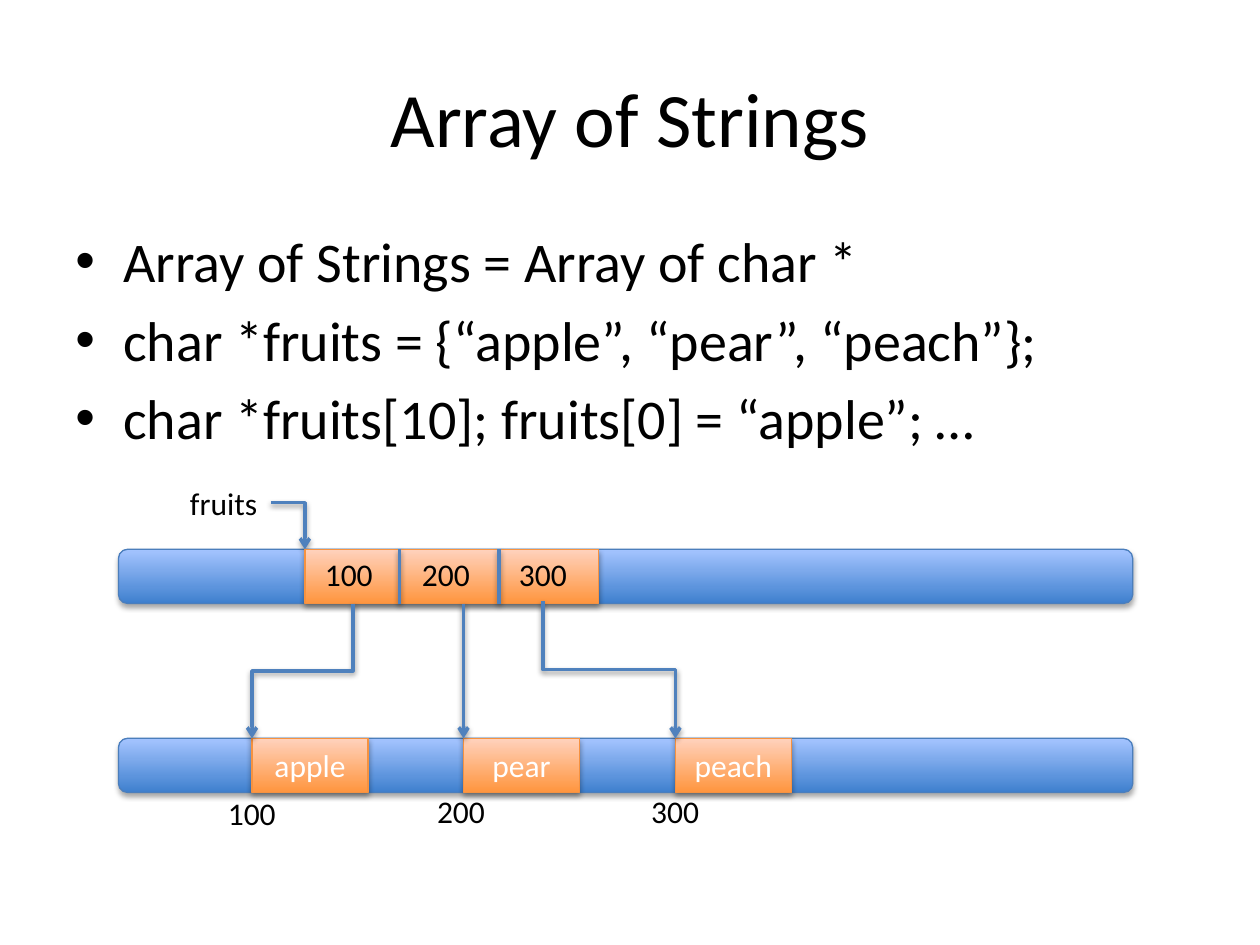
from dataclasses import dataclass

import pptx
import pptx.dml.color
import pptx.enum.dml
import pptx.enum.shapes
import pptx.enum.text
import pptx.oxml.ns
import pptx.util
from lxml import etree

PX = 9144  # one px is a hundredth of an inch
FONT = "Calibri"
HEX = {
    "ink": "000000", "white": "FFFFFF", "wire": "4F81BD",
    "blue low": "3F80CE", "blue top": "A4C4FF", "blue edge": "4B7EBC",
    "gold low": "FF953E", "gold top": "FFD2BD", "gold edge": "F69240",
}
BARS = pptx.enum.shapes.MSO_SHAPE
WIRES = pptx.enum.shapes.MSO_CONNECTOR
ALIGN = pptx.enum.text.PP_ALIGN
ANCHOR = pptx.enum.text.MSO_ANCHOR
TOP, LOW, TALL = 436, 586, 43
BULLETS = [
    "Array of Strings = Array of char *",
    "char *fruits = {“apple”, “pear”, “peach”};",
    "char *fruits[10]; fruits[0] = “apple”; …",
]


@dataclass
class Box:
    x: int
    y: int
    w: int
    h: int

    def emu(self) -> list[int]:
        return [n * PX for n in (self.x, self.y, self.w, self.h)]


@dataclass
class Fruit:
    name: str
    cell: str
    tag: Box
    start: tuple[int, int]


FRUITS = [
    Fruit("apple", "100", Box(171, 625, 59, 40), (280, 479)),
    Fruit("pear", "200", Box(337, 624, 59, 40), (368, 479)),
    Fruit("peach", "300", Box(507, 624, 59, 40), (431, 477)),
]


def tint(name: str) -> pptx.dml.color.RGBColor:
    return pptx.dml.color.RGBColor.from_string(HEX[name])


def node(base, tag: str, **attrs):
    """Append a DrawingML child with the given attributes."""
    kid = etree.SubElement(base, pptx.oxml.ns.qn("a:" + tag))
    for key, val in attrs.items():
        kid.set(key, str(val))
    return kid


def shade(effects, gap: int, alpha: int) -> None:
    """Put a soft shadow that falls straight down into an effect list."""
    cast = node(effects, "outerShdw", blurRad=40000, dist=gap,
                dir=5400000, rotWithShape=0)
    node(node(cast, "srgbClr", val=HEX["ink"]), "alpha", val=alpha * 1000)


def style(par, size: int, color: str) -> None:
    for run in par.runs:
        run.font.size = pptx.util.Pt(size)
        run.font.name = FONT
        run.font.color.rgb = tint(color)


def title(slide, box: Box, text: str) -> None:
    frame = slide.shapes.add_textbox(*box.emu()).text_frame
    frame.word_wrap = True
    frame.vertical_anchor = ANCHOR.MIDDLE
    frame.text = text
    frame.paragraphs[0].alignment = ALIGN.CENTER
    style(frame.paragraphs[0], 44, "ink")


def points(slide, box: Box, lines: list[str]) -> None:
    frame = slide.shapes.add_textbox(*box.emu()).text_frame
    frame.word_wrap = True
    frame.text = "\n".join(lines)
    for par in frame.paragraphs:
        style(par, 32, "ink")
        props = par._p.get_or_add_pPr()
        props.set("marL", str(38 * PX))
        props.set("indent", str(-38 * PX))
        node(node(props, "spcBef"), "spcPct", val=20000)
        node(props, "buFont", typeface="Arial")
        node(props, "buChar", char="•")


def label(slide, box: Box, text: str) -> None:
    frame = slide.shapes.add_textbox(*box.emu()).text_frame
    frame.word_wrap = False
    frame.auto_size = pptx.enum.text.MSO_AUTO_SIZE.SHAPE_TO_FIT_TEXT
    frame.text = text
    style(frame.paragraphs[0], 18, "ink")


def block(slide, kind, box: Box, hue: str, text: str = "") -> None:
    """Draw a shaded memory block in one of the two hues."""
    shape = slide.shapes.add_shape(kind, *box.emu())
    shape.fill.gradient()
    shape.fill.gradient_angle = 90
    for stop, end in zip(shape.fill.gradient_stops, ("low", "top")):
        stop.color.rgb = tint(f"{hue} {end}")
    shape.line.color.rgb = tint(f"{hue} edge")
    shape.line.width = pptx.util.Pt(0.75)
    shape.shadow.inherit = False
    props = shape.element.spPr
    shade(props.find(pptx.oxml.ns.qn("a:effectLst")), 23000, 35)
    if text:
        frame = shape.text_frame
        frame.text = text
        frame.vertical_anchor = ANCHOR.MIDDLE
        frame.paragraphs[0].alignment = ALIGN.CENTER
        style(frame.paragraphs[0], 18, "white")


def wire(slide, kind, ends: list[int], arrow: bool = False):
    link = slide.shapes.add_connector(kind, *ends)
    link.line.color.rgb = tint("wire")
    link.line.width = pptx.util.Pt(2)
    props = link.element.spPr
    if arrow:
        node(props.find(pptx.oxml.ns.qn("a:ln")), "tailEnd", type="arrow")
    shade(node(props, "effectLst"), 20000, 38)
    return link


def drop(slide, start: tuple[int, int], end: tuple[int, int]) -> None:
    """Draw an elbow arrow that leaves and arrives vertically."""
    (ax, ay), (bx, by) = start, end
    long, wide = (by - ay) * PX, abs(bx - ax) * PX
    left = ((ax + bx) * PX - long) // 2
    top = ((ay + by) * PX - wide) // 2
    link = wire(slide, WIRES.ELBOW, [left, top, left + long, top + wide], True)
    frame = link.element.spPr.find(pptx.oxml.ns.qn("a:xfrm"))
    frame.set("rot", str((90 if bx < ax else 270) * 60000))
    if bx >= ax:
        frame.set("flipH", "1")


def main() -> None:
    deck = pptx.Presentation()
    deck.slide_width, deck.slide_height = 1000 * PX, 750 * PX
    slide = deck.slides.add_slide(deck.slide_layouts[6])
    title(slide, Box(50, 30, 900, 125), "Array of Strings")
    points(slide, Box(50, 175, 900, 218), BULLETS)

    block(slide, BARS.ROUNDED_RECTANGLE, Box(94, TOP, 805, TALL), "blue")
    label(slide, Box(141, 379, 74, 40), "fruits")
    hook = wire(slide, WIRES.ELBOW,
                [n * PX for n in (215, 399, 242, TOP)], True)
    shape = hook.element.spPr.find(pptx.oxml.ns.qn("a:prstGeom"))
    shape.set("prst", "bentConnector2")
    block(slide, BARS.RECTANGLE, Box(242, TOP, 233, TALL), "gold")
    for x in (317, 396):
        wire(slide, WIRES.STRAIGHT, [n * PX for n in (x, TOP, x, TOP + TALL)])

    block(slide, BARS.ROUNDED_RECTANGLE, Box(94, LOW, 805, TALL), "blue")
    for i, fruit in enumerate(FRUITS):
        x = 200 + 168 * i
        block(slide, BARS.RECTANGLE, Box(x, LOW, 92, TALL), "gold", fruit.name)
        drop(slide, fruit.start, (x, LOW))
        label(slide, fruit.tag, fruit.cell)
        label(slide, Box(248 + 77 * i, TOP, 59, 40), fruit.cell)
    deck.save("out.pptx")


if __name__ == "__main__":
    main()
